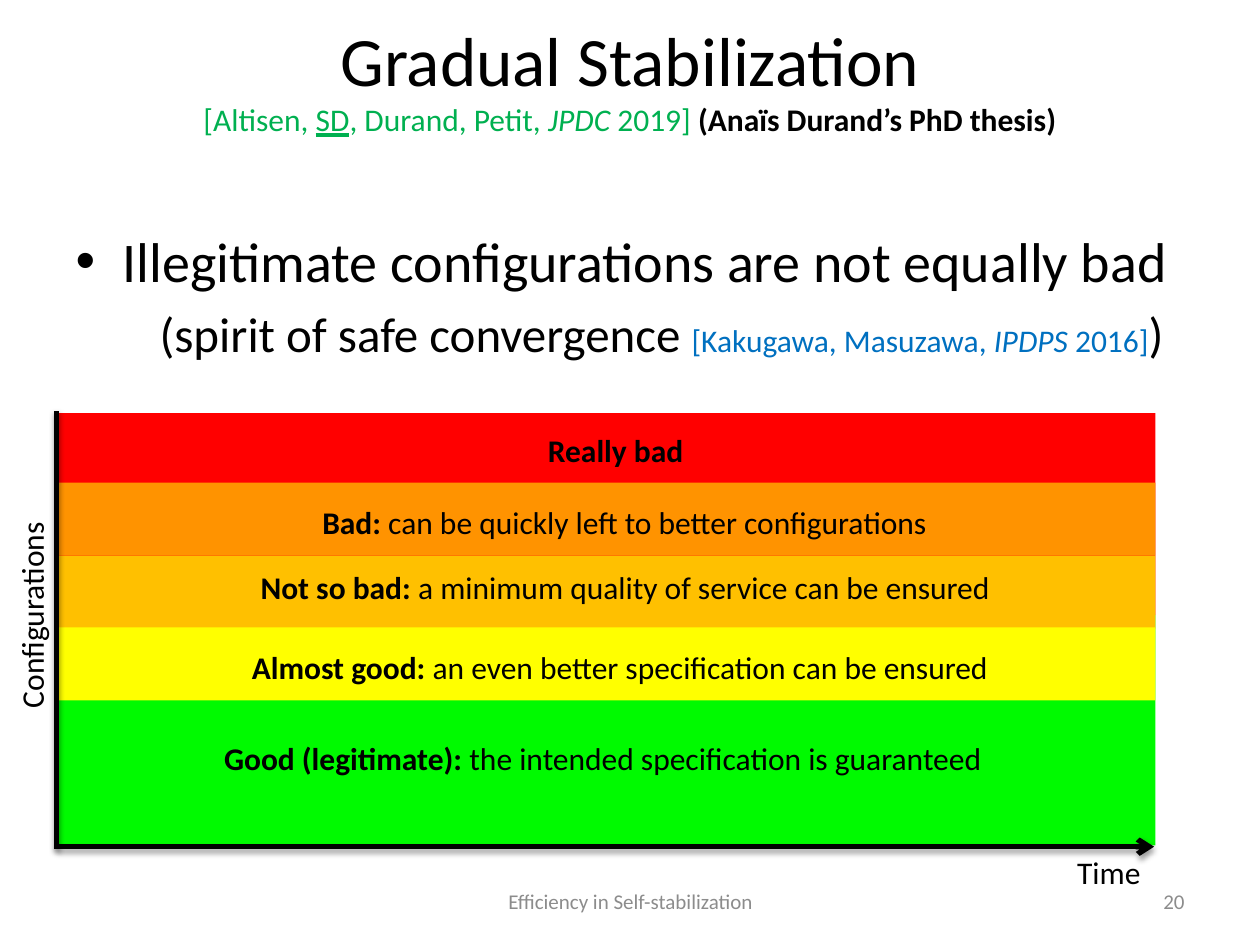
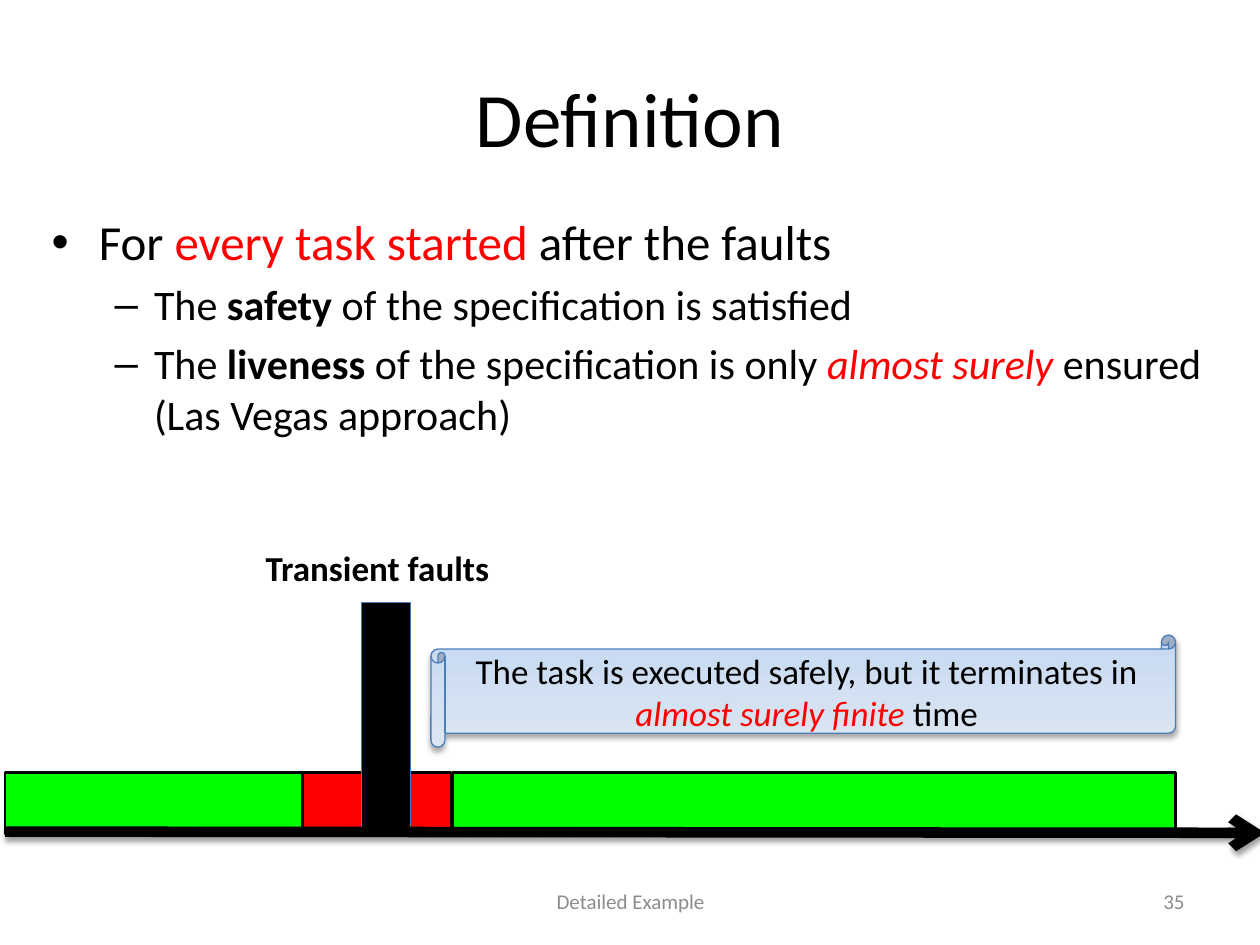
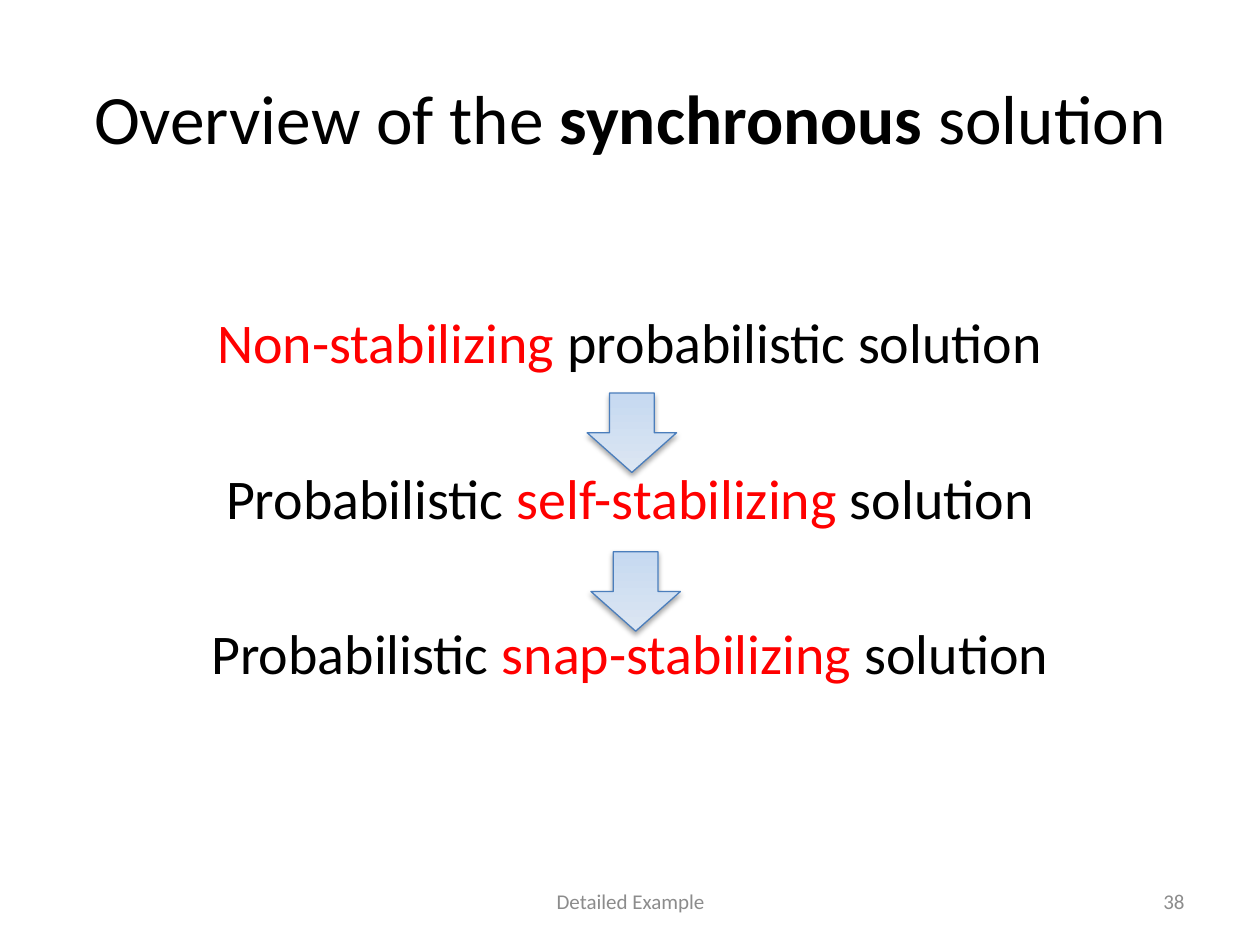
from dataclasses import dataclass
from lxml.etree import SubElement as Sub
from pptx import Presentation
from pptx.dml.color import RGBColor as Rgb
from pptx.enum.shapes import MSO_CONNECTOR as Conn, MSO_SHAPE as Geo
from pptx.enum.text import MSO_ANCHOR as Anchor, MSO_AUTO_SIZE as Auto, PP_ALIGN as Align
from pptx.oxml.ns import qn
from pptx.util import Inches, Pt


@dataclass(frozen=True)
class Theme:
    font: str = "Calibri"
    # Colours
    black: str = "000000"
    grey: str = "8C8C8C"
    red: str = "FF0000"
    orange: str = "FF9300"
    amber: str = "FFC000"
    yellow: str = "FFFF00"
    good: str = "00FA00"
    green: str = "00FF00"
    cite: str = "00B050"
    blue: str = "0070C0"
    edge: str = "4B7EBC"
    pale: str = "DCE6F2"
    sky: str = "C6D9F1"
    # Type sizes
    title: float = 44
    head: float = 39.6
    body: float = 32
    lead: float = 28
    item: float = 24
    note: float = 20
    label: float = 18
    foot: float = 12


T = Theme()


# Text

def style(font, size, color, marks=""):
    font.name = T.font
    font.size = Pt(size)
    font.color.rgb = Rgb.from_string(color)
    if "b" in marks:
        font.bold = True
    if "i" in marks:
        font.italic = True
    if "u" in marks:
        font.underline = True


def write(para, runs, size, color=T.black, align=None):
    """Each run is a text, or (text, marks, colour, size) with a short tail."""
    para.alignment = align
    style(para.font, size, color)
    for item in [runs] if isinstance(runs, str) else runs:
        text, marks, tint, points = (
            (item, "", None, None) if isinstance(item, str)
            else (*item, *(None,) * (4 - len(item))))
        run = para.add_run()
        run.text = text
        style(run.font, points or size, tint or color, marks or "")


def place(shape, box):
    shape.left, shape.top, shape.width, shape.height = map(Inches, box)


def label(slide, box, runs, size=T.label, color=T.black, align=Align.LEFT,
          anchor=Anchor.TOP, turn=0):
    shape = slide.shapes.add_textbox(*map(Inches, box))
    frame = shape.text_frame
    frame.word_wrap = True
    frame.vertical_anchor = anchor
    shape.rotation = turn
    write(frame.paragraphs[0], runs, size, color, align)


def fill_in(holder, box, lines):
    """Fill a placeholder; each line is (runs, size, level, align)."""
    place(holder, box)
    frame = holder.text_frame
    frame.auto_size = Auto.NONE
    paras = []
    for num, (runs, size, level, align) in enumerate(lines):
        para = frame.add_paragraph() if num else frame.paragraphs[0]
        para.level = level
        write(para, runs, size, align=align)
        paras.append(para)
    return paras


def plain(para, left=0):
    """Drop the bullet and set the left indent."""
    props = para._p.get_or_add_pPr()
    props.set("marL", str(Inches(left)))
    props.set("indent", "0")
    none = props.makeelement(qn("a:buNone"), {})
    props.insert_element_before(none, "a:tabLst", "a:defRPr", "a:extLst")


# Shapes

def shade(shape, alpha, dist):
    props = shape._element.spPr
    effects = props.find(qn("a:effectLst"))
    if effects is None:
        effects = Sub(props, qn("a:effectLst"))
    drop = Sub(effects, qn("a:outerShdw"), blurRad=str(Pt(3.1)),
               dist=str(Pt(dist)), dir="5400000", rotWithShape="0")
    tint = Sub(drop, qn("a:srgbClr"), val=T.black)
    Sub(tint, qn("a:alpha"), val=str(alpha * 1000))


def draw(slide, box, color=None, geo=Geo.RECTANGLE, edge=None, width=0.75):
    shape = slide.shapes.add_shape(geo, *map(Inches, box))
    shape.shadow.inherit = False
    if color:
        shape.fill.solid()
        shape.fill.fore_color.rgb = Rgb.from_string(color)
    if edge:
        shape.line.color.rgb = Rgb.from_string(edge)
        shape.line.width = Pt(width)
    else:
        shape.line.fill.background()
    return shape


def glossy(slide, box, geo):
    """A pale blue shape with a gradient and a soft shadow."""
    shape = draw(slide, box, geo=geo, edge=T.edge)
    shape.fill.gradient()
    shape.fill.gradient_angle = 90
    for stop, color in zip(shape.fill.gradient_stops, (T.pale, T.sky)):
        stop.color.rgb = Rgb.from_string(color)
    for stop, spot in zip(shape.fill.gradient_stops, (0, 1)):
        stop.position = spot
    shade(shape, 35, 1.8)
    return shape


def axis(slide, start, end, width, arrow=False):
    line = slide.shapes.add_connector(Conn.STRAIGHT, *map(Inches, start + end))
    line.line.color.rgb = Rgb.from_string(T.black)
    line.line.width = Pt(width)
    if arrow:
        Sub(line.line._get_or_add_ln(), qn("a:tailEnd"), type="arrow")
    shade(line, 38, 1.6)


# Slides

def start(deck, title, foot, page, box=(0.5, 0.3, 9, 1.25)):
    slide = deck.slides.add_slide(deck.slide_layouts[1])
    lines = [(runs, size, 0, Align.CENTER) for runs, size in title]
    fill_in(slide.shapes.title, box, lines)
    slide.shapes.title.text_frame.vertical_anchor = Anchor.MIDDLE
    for spot, text, align in (((3.42, 6.95, 3.17, 0.4), foot, Align.CENTER),
                              ((7.17, 6.95, 2.33, 0.4), page, Align.RIGHT)):
        label(slide, spot, text, T.foot, T.grey, align, Anchor.MIDDLE)
    return slide


def gradual(deck):
    cite = [("[Altisen, ", "", T.cite), ("SD", "u", T.cite),
            (", Durand, Petit, ", "", T.cite), ("JPDC", "i", T.cite),
            (" 2019] ", "", T.cite), ("(Anaïs Durand’s PhD thesis)", "b")]
    slide = start(deck, [("Gradual Stabilization", T.head), (cite, T.label)],
                  "Efficiency in Self-stabilization", "20", (0.5, 0, 9, 1.23))
    spirit = ["(spirit of safe convergence ",
              ("[Kakugawa, Masuzawa, ", "", T.blue, T.label),
              ("IPDPS", "i", T.blue, T.label),
              (" 2016]", "", T.blue, T.label), ")"]
    paras = fill_in(slide.placeholders[1], (0.5, 1.75, 9, 4.95), [
        ("Illegitimate configurations are not equally bad", T.body, 0, None),
        (spirit, T.lead, 1, Align.CENTER)])
    plain(paras[1], 0.5)

    # Quality bands, the outer two partly covered by the inner three
    for top, tall, color in ((3.28, 1.6, T.red), (4.88, 1.83, T.good),
                             (4.41, 0.58, T.amber), (3.83, 0.58, T.orange),
                             (4.98, 0.58, T.yellow)):
        draw(slide, (0.45, top, 8.72, tall), color)
    for left, top, wide, name, text in (
            (4.25, 3.37, 1.29, "Really bad", ""),
            (2.46, 3.94, 5.07, "Bad: ", "can be quickly left to better configurations"),
            (1.97, 4.46, 6.3, "Not so bad: ", "a minimum quality of service can be ensured"),
            (1.9, 5.09, 6.24, "Almost good: ", "an even better specification can be ensured"),
            (1.68, 5.82, 6.41, "Good (legitimate): ",
             "the intended specification is guaranteed")):
        runs = [(name, "b")] + ([text] if text else [])
        label(slide, (left, top, wide, 0.4), runs)

    # Axes
    axis(slide, (0.45, 6.72), (9.16, 6.72), 3, arrow=True)
    axis(slide, (0.45, 6.74), (0.45, 3.26), 3)
    label(slide, (-0.6, 4.67, 1.7, 0.4), "Configurations", turn=270)
    label(slide, (8.45, 6.72, 0.71, 0.4), "Time")


def define(deck):
    slide = start(deck, [("Definition", T.title)], "Detailed Example", "35")
    fill_in(slide.placeholders[1], (0.31, 1.63, 9.46, 5.15), [
        (["For ", ("every task started ", "", T.red), "after the faults"],
         T.lead, 0, None),
        (["The ", ("safety ", "b"), "of the specification is satisfied"],
         T.item, 1, None),
        (["The ", ("liveness ", "b"), "of the specification is only ",
          ("almost surely ", "i", T.red), "ensured (Las Vegas approach)"],
         T.item, 1, None)])

    # Timeline
    draw(slide, (2.4, 6.13, 1.18, 0.47), T.red, edge=T.black, width=1.5)
    draw(slide, (0.04, 6.13, 2.36, 0.49), T.green, edge=T.black, width=1.5)
    draw(slide, (2.87, 4.78, 0.39, 1.83), T.black, edge=T.edge)
    draw(slide, (3.59, 6.13, 5.74, 0.47), T.green, edge=T.black, width=1.5)
    axis(slide, (0.04, 6.6), (10.04, 6.61), 6, arrow=True)
    label(slide, (2.01, 4.29, 2.2, 0.44), [("Transient faults", "b")], T.note)

    # Scroll
    frame = glossy(slide, (3.42, 5.04, 5.91, 0.89), Geo.HORIZONTAL_SCROLL).text_frame
    frame.word_wrap = True
    frame.vertical_anchor = Anchor.MIDDLE
    write(frame.paragraphs[0],
          ["The task is executed safely, but it terminates in ",
           ("almost surely finite", "i", T.red), " time"],
          T.note, align=Align.CENTER)


def overview(deck):
    head = ["Overview of the ", ("synchronous", "b"), " solution"]
    slide = start(deck, [(head, T.head)], "Detailed Example", "38")
    steps = ([("Non-stabilizing ", "", T.red), "probabilistic solution"],
             ["Probabilistic ", ("self-stabilizing ", "", T.red), "solution"],
             ["Probabilistic ", ("snap-stabilizing ", "", T.red), "solution"])
    paras = fill_in(slide.placeholders[1], (0.5, 2.39, 9, 4.31),
                    [(runs, T.body, 0, Align.CENTER) for runs in steps])
    for num, para in enumerate(paras):
        plain(para)
        para.space_before = Pt(50.6 if num else 0)
    for left, top in ((4.66, 3.12), (4.69, 4.38)):
        glossy(slide, (left, top, 0.71, 0.63), Geo.DOWN_ARROW)


def main():
    deck = Presentation()
    deck.slide_width, deck.slide_height = Inches(10), Inches(7.5)
    gradual(deck)
    define(deck)
    overview(deck)
    deck.save("out.pptx")


if __name__ == "__main__":
    main()
